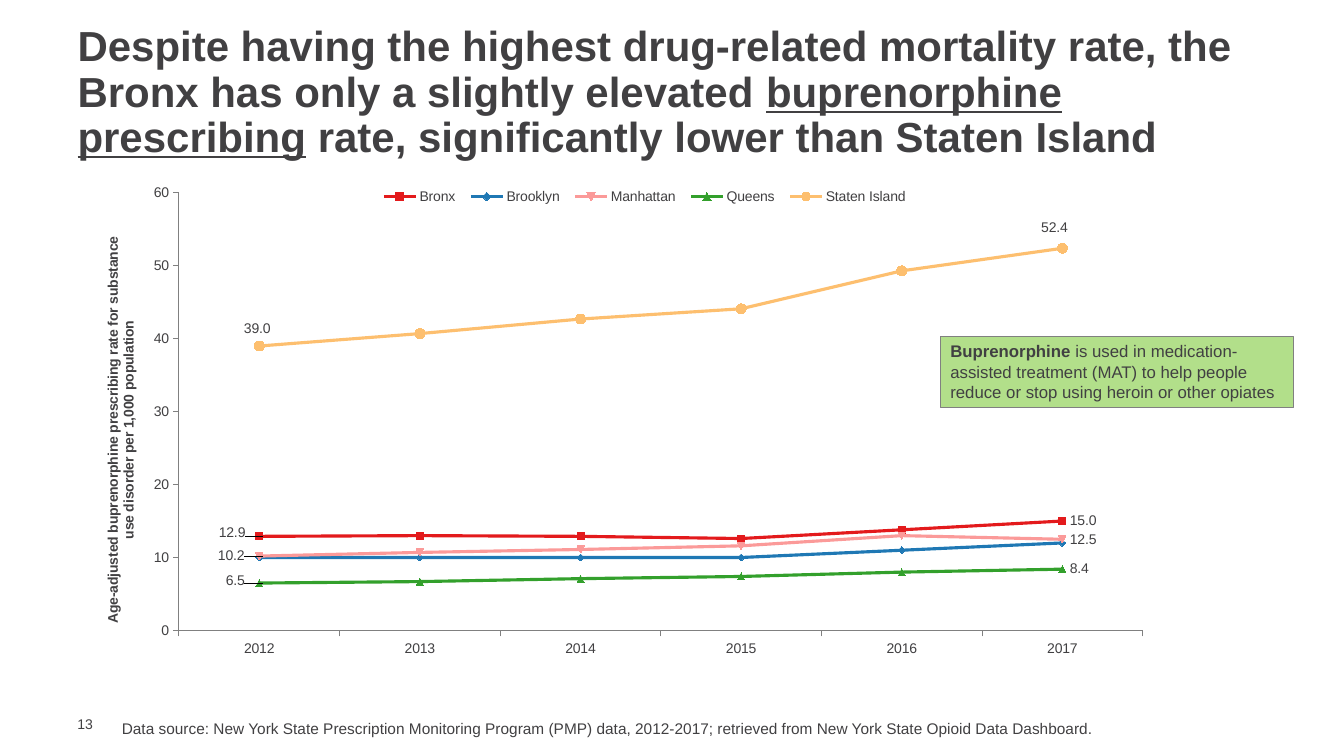
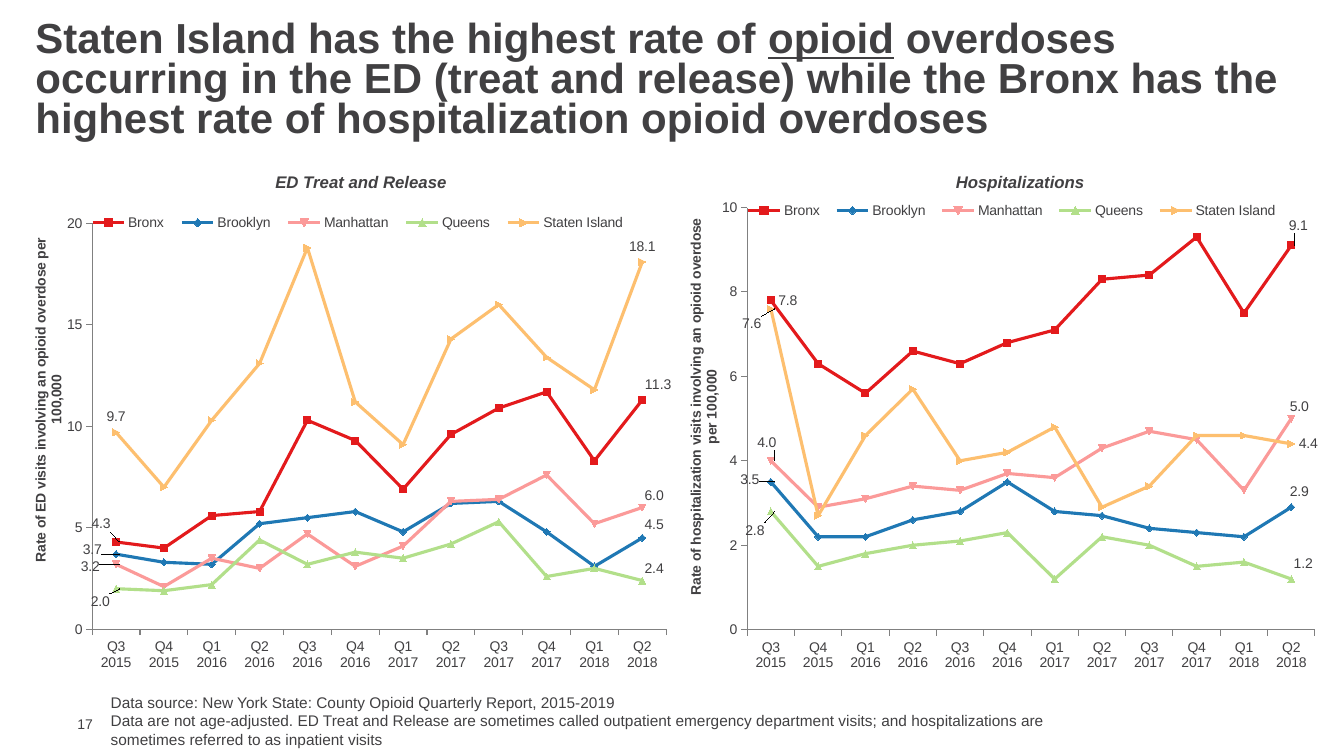
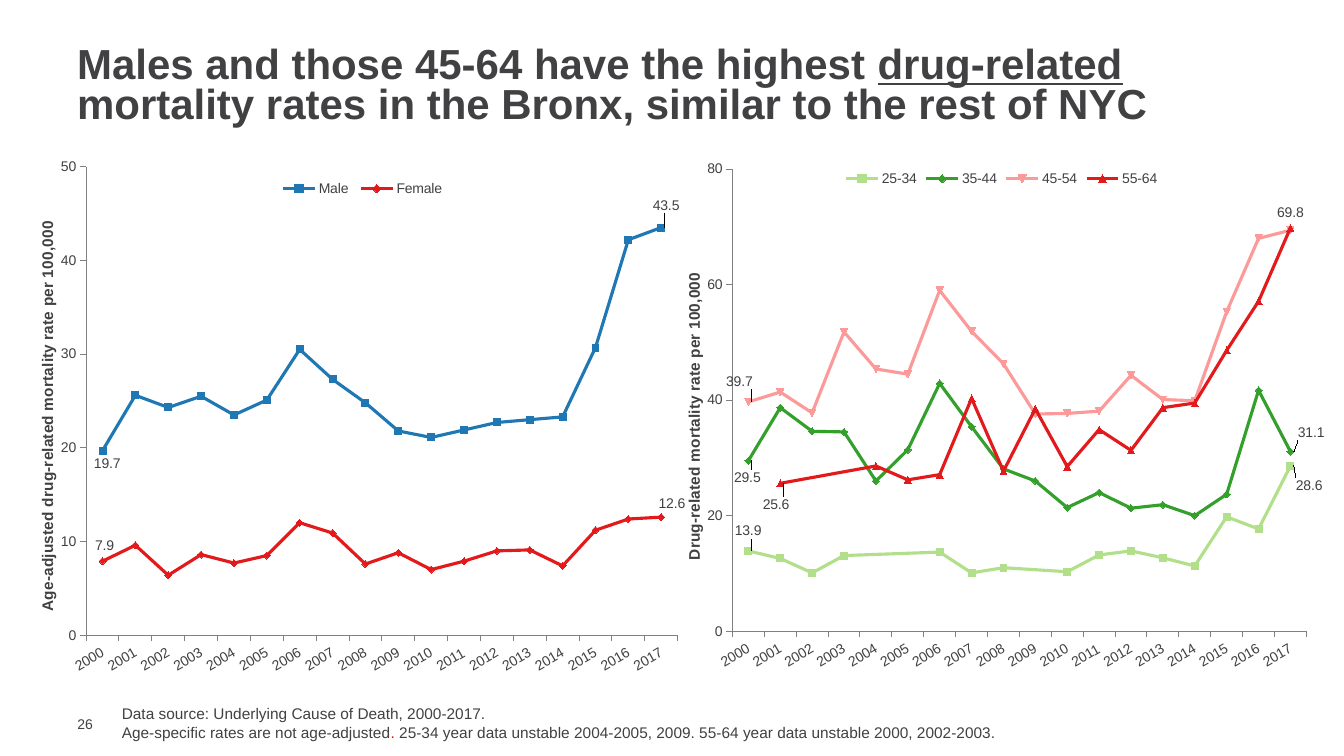
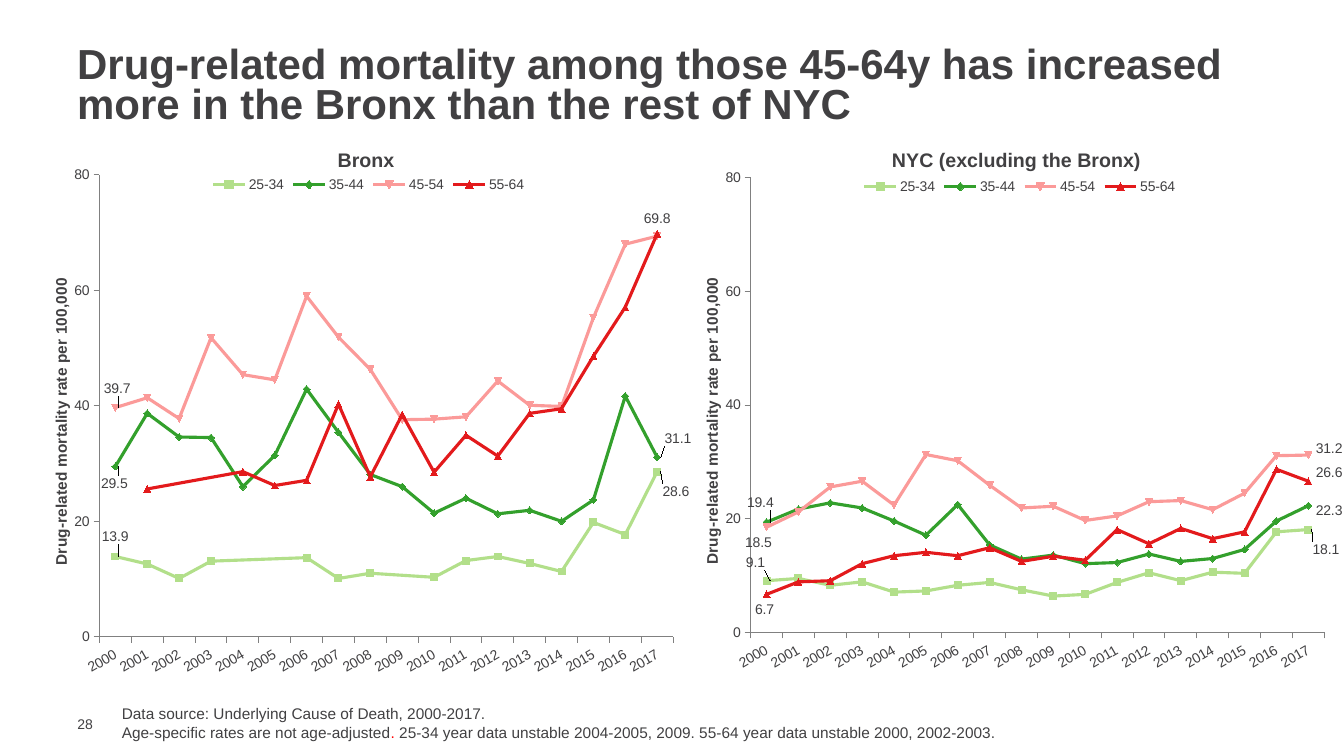
from dataclasses import dataclass, field

from lxml import etree
from pptx import Presentation
from pptx.chart.data import CategoryChartData
from pptx.dml.color import RGBColor
from pptx.enum.chart import (XL_CHART_TYPE, XL_LABEL_POSITION, XL_LEGEND_POSITION,
                             XL_MARKER_STYLE, XL_TICK_MARK)
from pptx.enum.shapes import MSO_SHAPE
from pptx.enum.text import MSO_ANCHOR, MSO_AUTO_SIZE, PP_ALIGN
from pptx.oxml import parse_xml
from pptx.oxml.ns import qn
from pptx.util import Cm, Pt

LINE_MARKERS = XL_CHART_TYPE.LINE_MARKERS
ABOVE = XL_LABEL_POSITION.ABOVE
BELOW = XL_LABEL_POSITION.BELOW
BESIDE = XL_LABEL_POSITION.RIGHT
LEGEND_TOP = XL_LEGEND_POSITION.TOP
AUTO_MARKER = XL_MARKER_STYLE.AUTOMATIC
CIRCLE_MARKER = XL_MARKER_STYLE.CIRCLE
TICK_OUTSIDE = XL_TICK_MARK.OUTSIDE
TICK_NONE = XL_TICK_MARK.NONE
RECTANGLE = MSO_SHAPE.RECTANGLE
TOP = MSO_ANCHOR.TOP
MIDDLE = MSO_ANCHOR.MIDDLE
LEFT = PP_ALIGN.LEFT
CENTER = PP_ALIGN.CENTER
NO_AUTOFIT = MSO_AUTO_SIZE.NONE

TITLE_ONLY = 5
LAYOUT_PREDECESSORS = {qn("c:idx"), qn("c:legendPos"), qn("c:tx")}
LEADER_LINES = (
    '<c:extLst xmlns:c="http://schemas.openxmlformats.org/drawingml/2006/chart">'
    '<c:ext uri="{CE6537A1-D6FC-4f65-9D91-7224C49458BB}"'
    ' xmlns:c15="http://schemas.microsoft.com/office/drawing/2012/chart">'
    '<c15:showLeaderLines val="1"/></c:ext></c:extLst>')


@dataclass(frozen=True)
class Theme:
    font: str = "Arial"
    text: str = "414042"
    axis: str = "808080"
    alert: str = "FF0000"
    red: str = "E31A1C"
    blue: str = "1F78B4"
    pink: str = "FB9A99"
    green: str = "33A02C"
    light_green: str = "B2DF8A"
    orange: str = "FDBF6F"
    title_size: int = 30
    heading_size: int = 14
    callout_size: int = 12
    source_size: int = 11
    small_size: int = 10
    series_width: float = 2.25
    thin_width: float = 0.75


THEME = Theme()


@dataclass
class Series:
    """Labels map a point index to (position, shift right, shift down) in cm."""
    name: str
    color: str
    values: list
    labels: dict = field(default_factory=dict)
    marker: object = AUTO_MARKER
    marker_size: int = 5


@dataclass
class LineChart:
    """Areas are (left, top, width, height) in cm on the slide."""
    area: tuple
    plot: tuple
    legend: tuple
    axis_title: str
    axis_title_at: tuple
    maximum: int
    step: int
    categories: list
    series: list
    axis_title_size: int = THEME.source_size
    slanted: bool = True


def rgb(color):
    return RGBColor.from_string(color)


def cm_all(lengths):
    return [Cm(length) for length in lengths]


def style_font(font, size, color=THEME.text, bold=False, italic=False, underline=False):
    font.name = THEME.font
    font.size = Pt(size)
    font.color.rgb = rgb(color)
    font.bold = bold
    font.italic = italic
    font.underline = underline


def write_paragraph(paragraph, runs, size, align=LEFT, **style):
    """Runs are (text, style changes) pairs."""
    paragraph.alignment = align
    for text, changes in runs:
        run = paragraph.add_run()
        run.text = text
        style_font(run.font, size, **{**style, **changes})


def add_text(slide, area, paragraphs, size, **style):
    frame = slide.shapes.add_textbox(*cm_all(area)).text_frame
    frame.word_wrap = True
    for index, runs in enumerate(paragraphs):
        paragraph = frame.add_paragraph() if index else frame.paragraphs[0]
        write_paragraph(paragraph, runs, size, **style)
    return frame


def add_page(deck, number, title_area, title_runs, source_area, source, spacing=0.8):
    slide = deck.slides.add_slide(deck.slide_layouts[TITLE_ONLY])
    title = slide.shapes.title
    title.left, title.top, title.width, title.height = cm_all(title_area)
    frame = title.text_frame
    frame.auto_size = NO_AUTOFIT
    frame.vertical_anchor = MIDDLE
    frame.paragraphs[0].line_spacing = spacing
    write_paragraph(frame.paragraphs[0], title_runs, THEME.title_size, bold=True)

    add_text(slide, source_area, source, THEME.source_size)
    page_number = add_text(slide, (1.7, 18.03, 1.09, 0.43), [[(str(number), {})]],
                           THEME.small_size)
    page_number.vertical_anchor = MIDDLE
    page_number.margin_top = page_number.margin_right = page_number.margin_bottom = 0
    return slide


def add_callout(slide, area, runs):
    callout = slide.shapes.add_shape(RECTANGLE, *cm_all(area))
    callout.shadow.inherit = False
    callout.fill.solid()
    callout.fill.fore_color.rgb = rgb(THEME.light_green)
    callout.line.color.rgb = rgb(THEME.axis)
    callout.line.width = Pt(THEME.thin_width)
    callout.text_frame.word_wrap = True
    callout.text_frame.vertical_anchor = TOP
    write_paragraph(callout.text_frame.paragraphs[0], runs, THEME.callout_size)


def set_layout(part, **settings):
    """Give a chart part a manual layout; settings follow schema order."""
    old = part.find(qn("c:layout"))
    if old is not None:
        part.remove(old)
    layout = etree.Element(qn("c:layout"))
    manual = etree.SubElement(layout, qn("c:manualLayout"))
    for name, value in settings.items():
        etree.SubElement(manual, qn("c:" + name)).set("val", str(value))
    part.insert(sum(child.tag in LAYOUT_PREDECESSORS for child in part), layout)


def place(part, chart_area, area, **target):
    """Place a chart part at an area of the slide."""
    left, top, width, height = chart_area
    fractions = {"x": (area[0] - left) / width, "y": (area[1] - top) / height}
    if len(area) == 4:
        fractions.update(w=area[2] / width, h=area[3] / height)
    set_layout(part, **target, xMode="edge", yMode="edge", **fractions)


def rotate_text(part, degrees):
    body = part.find(".//" + qn("a:bodyPr"))
    body.set("rot", str(degrees * 60000))
    body.set("vert", "horz")


def format_axis(axis):
    axis.has_major_gridlines = False
    axis.major_tick_mark = TICK_OUTSIDE
    axis.minor_tick_mark = TICK_NONE
    axis.format.line.color.rgb = rgb(THEME.axis)
    axis.format.line.width = Pt(THEME.thin_width)
    style_font(axis.tick_labels.font, THEME.small_size)


def format_value_axis(axis, content):
    format_axis(axis)
    axis.minimum_scale = 0
    axis.maximum_scale = content.maximum
    axis.major_unit = content.step
    axis.tick_labels.number_format = "0"
    axis.tick_labels.number_format_is_linked = False
    title = axis.axis_title
    write_paragraph(title.text_frame.paragraphs[0], [(content.axis_title, {})],
                    content.axis_title_size, align=CENTER, bold=True)
    rotate_text(title._element, -90)
    place(title._element, content.area, content.axis_title_at)


def format_series(line, content, chart_area):
    line.smooth = False
    line.format.line.color.rgb = rgb(content.color)
    line.format.line.width = Pt(THEME.series_width)
    line.marker.style = content.marker
    line.marker.size = content.marker_size
    line.marker.format.fill.solid()
    line.marker.format.fill.fore_color.rgb = rgb(content.color)
    line.marker.format.line.color.rgb = rgb(content.color)
    if not content.labels:
        return
    line.data_labels.show_value = False
    for index, (position, right, down) in content.labels.items():
        label = line.points[index].data_label
        style_font(label.font, THEME.small_size)
        label.position = position
        if right or down:
            set_layout(label._dLbl, x=right / chart_area[2], y=down / chart_area[3])
    line.data_labels._element.append(parse_xml(LEADER_LINES))


def add_line_chart(slide, content):
    data = CategoryChartData(number_format="0.0")
    data.categories = content.categories
    for series in content.series:
        data.add_series(series.name, series.values)
    chart = slide.shapes.add_chart(LINE_MARKERS, *cm_all(content.area), data).chart
    chart.has_title = False
    style_font(chart.font, THEME.small_size)

    format_axis(chart.category_axis)
    if content.slanted:
        rotate_text(chart.category_axis._element.find(qn("c:txPr")), -30)
    format_value_axis(chart.value_axis, content)

    chart.has_legend = True
    chart.legend.position = LEGEND_TOP
    chart.legend.include_in_layout = False
    style_font(chart.legend.font, THEME.small_size)
    place(chart.legend._element, content.area, content.legend)

    chart_root = chart._chartSpace
    place(chart_root.find(".//" + qn("c:plotArea")), content.area, content.plot,
          layoutTarget="inner")
    chart_root.find(".//" + qn("c:dispBlanksAs")).set("val", "span")
    for line, series in zip(chart.plots[0].series, content.series):
        format_series(line, series, content.area)


BOROUGHS = ["Bronx", "Brooklyn", "Manhattan", "Queens", "Staten Island"]
BOROUGH_COLORS = [THEME.red, THEME.blue, THEME.pink, THEME.light_green, THEME.orange]
AGES = ["25-34", "35-44", "45-54", "55-64"]
AGE_COLORS = [THEME.light_green, THEME.green, THEME.pink, THEME.red]
YEARS = [str(year) for year in range(2000, 2018)]
QUARTERS = [f"Q{index % 4 + 1} {2015 + index // 4}" for index in range(2, 14)]

BRONX_AGE_RATES = [
    [13.9, 12.6, 10.1, 13.1, None, None, 13.7, 10.1, 11, None, 10.3, 13.2, 13.9, 12.7,
     11.3, 19.8, 17.7, 28.6],
    [29.5, 38.7, 34.6, 34.5, 26, 31.4, 42.9, 35.4, 28.1, 26, 21.4, 24, 21.3, 21.9, 20,
     23.7, 41.7, 31.1],
    [39.7, 41.4, 37.8, 51.8, 45.4, 44.5, 59, 51.9, 46.3, 37.6, 37.7, 38.1, 44.3, 40.1,
     39.9, 55.3, 68, 69.4],
    [None, 25.6, None, None, 28.6, 26.2, 27.1, 40.3, 27.7, 38.5, 28.5, 34.9, 31.3, 38.7,
     39.5, 48.6, 57.1, 69.8],
]
NYC_AGE_RATES = [
    [9.1, 9.5, 8.3, 8.9, 7.1, 7.3, 8.3, 8.8, 7.5, 6.4, 6.7, 8.8, 10.5, 9.1, 10.6, 10.4,
     17.7, 18.1],
    [19.4, 21.7, 22.8, 21.9, 19.6, 17.1, 22.5, 15.4, 12.9, 13.6, 12.1, 12.3, 13.8, 12.5,
     13, 14.6, 19.6, 22.3],
    [18.5, 21.2, 25.6, 26.6, 22.4, 31.3, 30.2, 25.9, 21.9, 22.2, 19.7, 20.5, 23, 23.2,
     21.6, 24.5, 31.1, 31.2],
    [6.7, 8.9, 9.1, 12.1, 13.5, 14.1, 13.5, 14.9, 12.5, 13.4, 12.7, 18.1, 15.6, 18.3,
     16.5, 17.7, 28.7, 26.6],
]
YOUNGER_BRONX_LABELS = [
    {0: (BESIDE, -0.53, -0.5), 17: (BESIDE, -0.05, 0.5)},
    {0: (BESIDE, -0.55, 0.43), 17: (BESIDE, 0, -0.48)},
]
AGE_SOURCE = [
    [("Data source: Underlying Cause of Death, 2000-2017.", {})],
    [("Age-specific rates are not age-adjusted", {}),
     (". ", {"color": THEME.alert}),
     ("25-34 year data unstable 2004-2005, 2009. 55-64 year data unstable 2000, "
      "2002-2003.", {})],
]
AGE_TITLE_AREA = (1.69, 1.05, 30.48, 2.31)
AGE_SOURCE_AREA = (2.82, 17.62, 24.66, 1.19)


def series_list(names, colors, values, labels):
    return [Series(*parts) for parts in zip(names, colors, values, labels)]


def age_chart(area, plot, legend_at, title_at, rates, labels):
    return LineChart(area, plot, (*legend_at, 8.1, 0.55),
                     "Drug-related mortality rate per 100,000", title_at, 80, 20, YEARS,
                     series_list(AGES, AGE_COLORS, rates, labels))


def quarter_chart(area, plot, legend, title, title_at, maximum, step, rates, labels):
    return LineChart(area, plot, legend, title, title_at, maximum, step, QUARTERS,
                     series_list(BOROUGHS, BOROUGH_COLORS, rates, labels),
                     axis_title_size=THEME.small_size, slanted=False)


def build_prescribing(deck):
    slide = add_page(
        deck, 13, (1.7, 0.5, 30.48, 3.71),
        [("Despite having the highest drug-related mortality rate, the Bronx has only a "
          "slightly elevated ", {}),
         ("buprenorphine prescribing", {"underline": True}),
         (" rate, significantly lower than Staten Island", {})],
        (2.82, 18, 25.32, 0.74),
        [[("Data source: New York State Prescription Monitoring Program (PMP) data, "
           "2012-2017; retrieved from New York State Opioid Data Dashboard.", {})]],
        spacing=0.9)
    rates = [[12.9, 13, 12.9, 12.6, 13.8, 15], [10, 10, 10, 10, 11, 12],
             [10.2, 10.7, 11.1, 11.6, 13, 12.5], [6.5, 6.7, 7.1, 7.4, 8, 8.4],
             [39, 40.7, 42.7, 44.1, 49.3, 52.4]]
    beside_last = {5: (BESIDE, 0, 0)}
    labels = [{0: (BESIDE, -1.21, -0.1), **beside_last}, {},
              {0: (BESIDE, -1.23, -0.02), **beside_last},
              {0: (BESIDE, -1.03, -0.05), **beside_last},
              {0: (ABOVE, -0.05, 0), 5: (ABOVE, -0.2, -0.1)}]
    boroughs = series_list(BOROUGHS, BOROUGH_COLORS, rates, labels)
    queens, staten_island = boroughs[3:]
    queens.color = THEME.green
    staten_island.marker, staten_island.marker_size = CIRCLE_MARKER, 7
    add_line_chart(slide, LineChart(
        (2.54, 4.65, 26.67, 12.4), (4.51, 4.86, 24.29, 11.03), (9.4, 4.68, 13.7, 0.55),
        "Age-adjusted buprenorphine prescribing rate for substance use disorder per "
        "1,000 population", (2.55, 5.9), 60, 10,
        [str(year) for year in range(2012, 2018)], boroughs,
        axis_title_size=THEME.small_size, slanted=False))
    add_callout(slide, (23.7, 8.47, 8.89, 1.8), [
        ("Buprenorphine", {"bold": True}),
        (" is used in medication-assisted treatment (MAT) to help people reduce or stop "
         "using heroin or other opiates", {})])


def build_overdoses(deck):
    slide = add_page(
        deck, 17, (0.64, 0.39, 32.59, 3.33),
        [("Staten Island has the highest rate of ", {}),
         ("opioid", {"underline": True}),
         (" overdoses occurring in the ED (treat and release) while the Bronx has the "
          "highest rate of hospitalization opioid overdoses", {})],
        (2.54, 17.34, 25.4, 1.7),
        [[("Data source: New York State: County Opioid Quarterly Report, 2015-2019", {})],
         [("Data are not age-adjusted. ED Treat and Release are sometimes called "
           "outpatient emergency department visits; and hospitalizations are sometimes "
           "referred to as inpatient visits", {})]])
    add_line_chart(slide, quarter_chart(
        (0.64, 5.28, 16.28, 11.89), (2.33, 5.63, 14.52, 10.23), (2, 5.34, 14.1, 0.55),
        "Rate of ED visits involving an opioid overdose per 100,000", (0.73, 5.9), 20, 5,
        [[4.3, 4, 5.6, 5.8, 10.3, 9.3, 6.9, 9.6, 10.9, 11.7, 8.3, 11.3],
         [3.7, 3.3, 3.2, 5.2, 5.5, 5.8, 4.8, 6.2, 6.3, 4.8, 3.1, 4.5],
         [3.2, 2.1, 3.5, 3, 4.7, 3.1, 4.1, 6.3, 6.4, 7.6, 5.2, 6],
         [2, 1.9, 2.2, 4.4, 3.2, 3.8, 3.5, 4.2, 5.3, 2.6, 3, 2.4],
         [9.7, 7, 10.3, 13.1, 18.8, 11.2, 9.1, 14.3, 16, 13.4, 11.8, 18.1]],
        [{0: (BESIDE, -0.81, -0.45), 11: (ABOVE, 0.4, 0)},
         {0: (BESIDE, -1.03, -0.1), 11: (ABOVE, 0.3, 0.05)},
         {0: (BESIDE, -1.08, 0.05), 11: (ABOVE, 0.3, 0.1)},
         {0: (BESIDE, -0.83, 0.33), 11: (ABOVE, 0.3, 0.1)},
         {0: (ABOVE, 0, 0), 11: (ABOVE, 0, 0)}]))
    add_line_chart(slide, quarter_chart(
        (17.15, 4.88, 16.08, 12.32), (18.83, 5.23, 14.31, 10.64),
        (18.55, 5.03, 13.9, 0.55),
        "Rate of hospitalization visits involving an opioid overdose per 100,000",
        (17.24, 5.44), 10, 2,
        [[7.8, 6.3, 5.6, 6.6, 6.3, 6.8, 7.1, 8.3, 8.4, 9.3, 7.5, 9.1],
         [3.5, 2.2, 2.2, 2.6, 2.8, 3.5, 2.8, 2.7, 2.4, 2.3, 2.2, 2.9],
         [4, 2.9, 3.1, 3.4, 3.3, 3.7, 3.6, 4.3, 4.7, 4.5, 3.3, 5],
         [2.8, 1.5, 1.8, 2, 2.1, 2.3, 1.2, 2.2, 2, 1.5, 1.6, 1.2],
         [7.6, 2.7, 4.6, 5.7, 4, 4.2, 4.8, 2.9, 3.4, 4.6, 4.6, 4.4]],
        [{0: (BESIDE, 0, 0), 11: (BESIDE, -0.25, -0.5)},
         {0: (BESIDE, -0.96, -0.05), 11: (ABOVE, 0.2, 0)},
         {0: (BESIDE, -0.53, -0.45), 11: (ABOVE, 0.2, 0.1)},
         {0: (BESIDE, -0.83, 0.48), 11: (ABOVE, 0.3, 0)},
         {0: (BESIDE, -0.91, 0.38), 11: (BESIDE, 0, 0)}]))
    for left, heading in ((6.56, "ED Treat and Release"), (23.17, "Hospitalizations")):
        add_text(slide, (left, 4.21, 5.08, 0.76), [[(heading, {})]], THEME.callout_size,
                 align=CENTER, bold=True, italic=True)


def build_bronx_mortality(deck):
    slide = add_page(
        deck, 26, AGE_TITLE_AREA,
        [("Males and those 45-64 have the highest ", {}),
         ("drug-related ", {"underline": True}),
         ("mortality rates in the Bronx, similar to the rest of NYC", {})],
        AGE_SOURCE_AREA, AGE_SOURCE)
    male = Series("Male", THEME.blue,
                  [19.7, 25.6, 24.3, 25.5, 23.5, 25.1, 30.5, 27.3, 24.8, 21.8, 21.1, 21.9,
                   22.7, 23, 23.3, 30.7, 42.2, 43.5],
                  {0: (BELOW, 0.12, -0.05), 17: (BESIDE, -0.4, -0.55)})
    female = Series("Female", THEME.red,
                    [7.9, 9.6, 6.4, 8.6, 7.7, 8.5, 12, 10.9, 7.6, 8.8, 7, 7.9, 9, 9.1,
                     7.4, 11.2, 12.4, 12.6],
                    {0: (ABOVE, 0.05, 0), 17: (ABOVE, 0.27, 0.05)})
    add_line_chart(slide, LineChart(
        (0.84, 3.81, 16.51, 14.2), (2.17, 4.2, 14.91, 11.81), (6.94, 4.48, 4.4, 0.55),
        "Age-adjusted drug-related mortality rate per 100,000", (0.85, 5.5), 50, 10,
        YEARS, [male, female]))
    add_line_chart(slide, age_chart(
        (17.15, 4.01, 16.23, 13.34), (18.46, 4.26, 14.49, 11.65), (21.21, 4.23),
        (17.15, 6.79), BRONX_AGE_RATES,
        YOUNGER_BRONX_LABELS + [{0: (BESIDE, -0.75, -0.5)},
                                {1: (BESIDE, -0.63, 0.53), 17: (ABOVE, 0, 0)}]))


def build_city_comparison(deck):
    slide = add_page(
        deck, 28, AGE_TITLE_AREA,
        [("Drug-related mortality among those 45-64y has increased more in the Bronx than "
          "the rest of NYC", {})],
        AGE_SOURCE_AREA, AGE_SOURCE)
    add_line_chart(slide, age_chart(
        (1.19, 4.17, 16.23, 13.34), (2.51, 4.41, 14.49, 11.64), (5.26, 4.38),
        (1.2, 6.92), BRONX_AGE_RATES,
        YOUNGER_BRONX_LABELS + [{0: (BESIDE, -0.48, -0.48)}, {17: (ABOVE, 0, 0)}]))
    add_line_chart(slide, age_chart(
        (17.6, 4.24, 16.23, 13.13), (18.92, 4.48, 14.49, 11.46), (21.67, 4.43),
        (17.61, 6.9), NYC_AGE_RATES,
        [{0: (BESIDE, -0.71, -0.45), 17: (BESIDE, -0.08, 0.5)},
         {0: (BESIDE, -0.68, -0.5), 17: (BESIDE, 0, 0.13)},
         {0: (BESIDE, -0.73, 0.38), 17: (BESIDE, 0, -0.17)},
         {0: (BELOW, -0.05, 0), 17: (BESIDE, 0, -0.22)}]))
    for left, width, heading in ((8.26, 2.11, "Bronx"),
                                 (22.23, 6.99, "NYC (excluding the Bronx)")):
        add_text(slide, (left, 3.6, width, 0.86), [[(heading, {})]], THEME.heading_size,
                 bold=True)


def main():
    deck = Presentation()
    deck.slide_width, deck.slide_height = Cm(33.87), Cm(19.05)
    build_prescribing(deck)
    build_overdoses(deck)
    build_bronx_mortality(deck)
    build_city_comparison(deck)
    deck.save("out.pptx")


if __name__ == "__main__":
    main()
